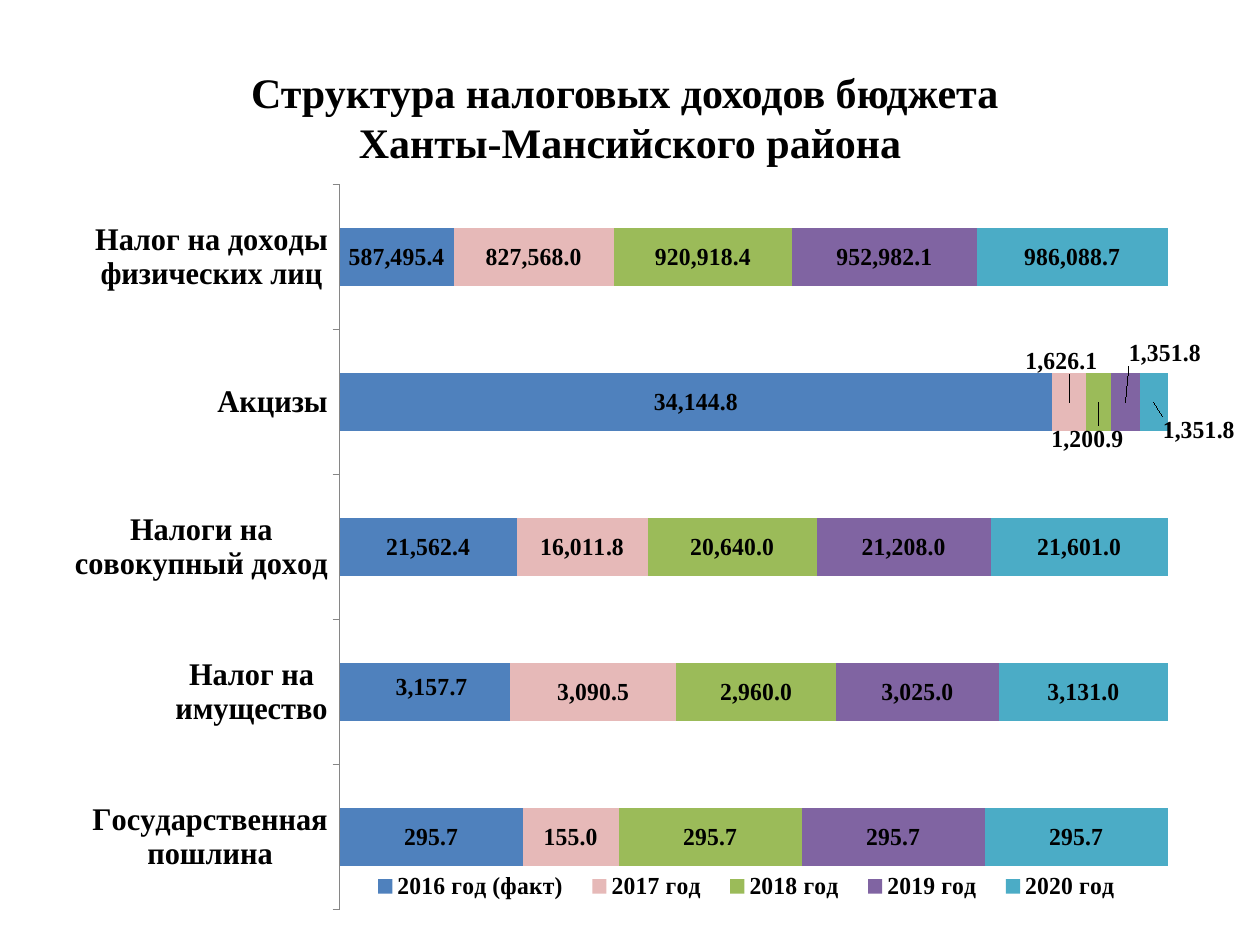
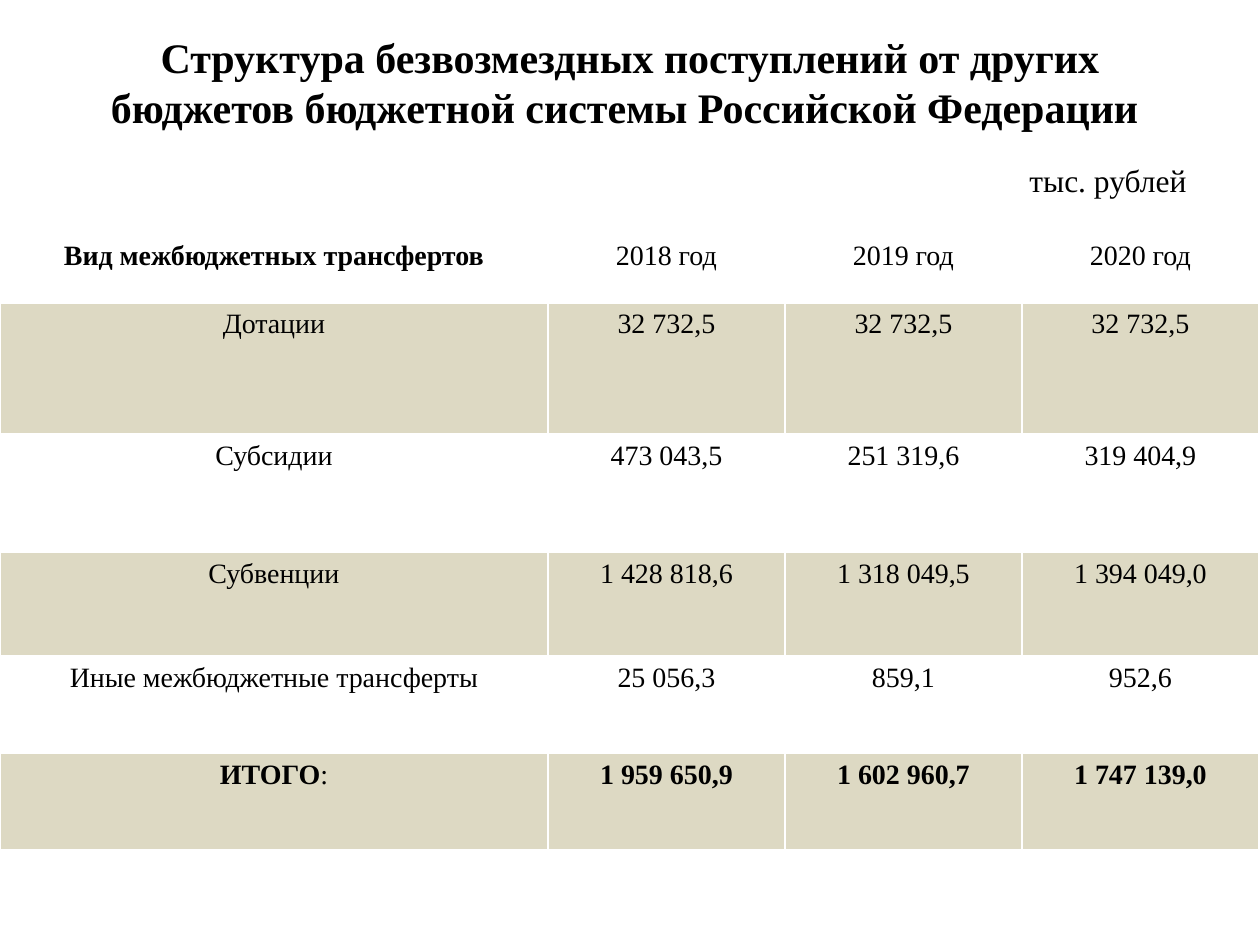
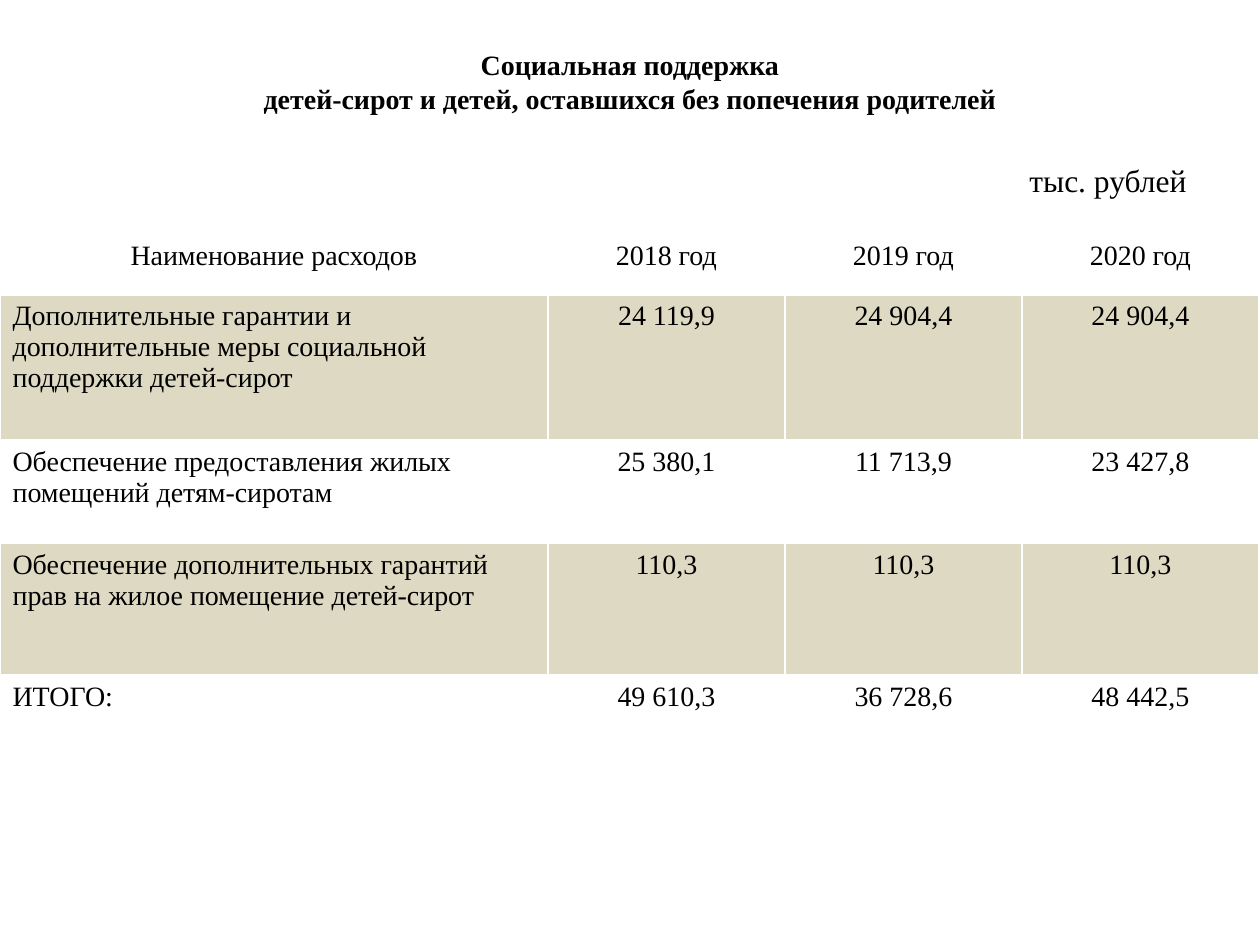
from pptx import Presentation
from pptx.chart.data import CategoryChartData
from pptx.dml.color import RGBColor
from pptx.enum.chart import XL_CHART_TYPE as ChartType, XL_LEGEND_POSITION as LegendPosition
from pptx.enum.chart import XL_TICK_LABEL_POSITION as TickLabels
from pptx.enum.text import MSO_ANCHOR as Anchor, PP_ALIGN as Align
from pptx.oxml.ns import qn
from pptx.oxml.xmlchemy import OxmlElement
from pptx.util import Emu, Pt

# Shared look
BLACK = RGBColor(0x00, 0x00, 0x00)
WHITE = RGBColor(0xFF, 0xFF, 0xFF)
BAND = RGBColor(0xDD, 0xD9, 0xC3)
AXIS_GRAY = RGBColor(0x86, 0x86, 0x86)
BLUE = RGBColor(0x4F, 0x81, 0xBD)
PINK = RGBColor(0xE6, 0xB9, 0xB8)
GREEN = RGBColor(0x9B, 0xBB, 0x59)
PURPLE = RGBColor(0x80, 0x64, 0xA2)
TEAL = RGBColor(0x4B, 0xAC, 0xC6)
FONT = "Times New Roman"
NUMBER_FORMAT = "#,##0.0"
PX_PER_INCH = 126
TITLE_BOX = (63, 38, 1134, 87)
UNIT_BOX = (1017, 155, 208, 50)
UNIT = "тыс. рублей"
COLUMN_WIDTHS = (548, 237, 237, 237)
TABLE_TOP = 234
YEARS = ("2018 год", "2019 год", "2020 год")

# Slide 1: tax revenue
TAX_TITLE = "Структура налоговых доходов бюджета \vХанты-Мансийского района"
TAX_TITLE_BOX = (63, 38, 1134, 157)
CHART_BOX = (63, 175, 1172, 745)
PLOT_AREA = (0.245, 0.013, 0.733, 0.973)
LEGEND_AREA = (0.26, 0.93, 0.69, 0.05)
TAXES = ("Государственная пошлина", "Налог на имущество", "Налоги на совокупный доход",
         "Акцизы", "Налог на доходы физических лиц")
# name, colour, values, (moved point, shift in px)
TAX_SERIES = (
    ("2016 год (факт)", BLUE, (295.7, 3157.7, 21562.4, 34144.8, 587495.4), (1, 7, -5)),
    ("2017 год", PINK, (155, 3090.5, 16011.8, 1626.1, 827568), (3, -8, -41)),
    ("2018 год", GREEN, (295.7, 2960, 20640, 1200.9, 920918.4), (3, -12, 37)),
    ("2019 год", PURPLE, (295.7, 3025, 21208, 1351.8, 952982.1), (3, 41, -49)),
    ("2020 год", TEAL, (295.7, 3131, 21601, 1351.8, 986088.7), (3, 47, 28)),
)

# Slides 2 and 3: tables
TABLE_SLIDES = (
    {
        "title": "Структура безвозмездных поступлений от других "
                 "бюджетов бюджетной системы Российской Федерации ",
        "title_size": 24,
        "name_align": Align.CENTER,
        "heights": (68, 132, 118, 104, 97, 97),
        "bold": {(0, 0), (5, 0), (5, 1), (5, 2), (5, 3)},
        "rows": (
            ("Вид межбюджетных трансфертов", *YEARS),
            ("Дотации", "32 732,5", "32 732,5", "32 732,5"),
            ("Субсидии", "473 043,5", "251 319,6", "319 404,9"),
            ("Субвенции", "1 428 818,6", "1 318 049,5", "1 394 049,0"),
            ("Иные межбюджетные трансферты", "25 056,3", "859,1", "952,6"),
            ("ИТОГО:", "1 959 650,9", "1 602 960,7", "1 747 139,0"),
        ),
    },
    {
        "title": "Социальная поддержка\vдетей-сирот и детей, оставшихся без попечения родителей",
        "title_size": 16,
        "name_align": Align.LEFT,
        "heights": (60, 146, 103, 132, 84),
        "bold": set(),
        "rows": (
            ("Наименование расходов", *YEARS),
            ("Дополнительные гарантии и дополнительные меры социальной поддержки детей-сирот",
             "24 119,9", "24 904,4", "24 904,4"),
            ("Обеспечение предоставления жилых помещений детям-сиротам",
             "25 380,1", "11 713,9", "23 427,8"),
            ("Обеспечение дополнительных гарантий прав на жилое помещение детей-сирот",
             "110,3", "110,3", "110,3"),
            ("ИТОГО:", "49 610,3", "36 728,6", "48 442,5"),
        ),
    },
)


def px(length):
    return Emu(round(length * 914400 / PX_PER_INCH))


def box(lengths):
    return [px(length) for length in lengths]


def set_font(font, size, bold=False):
    font.name, font.size, font.bold = FONT, Pt(size), bold
    font.color.rgb = BLACK


def add_text(slide, area, text, size, bold=False, align=Align.LEFT, anchor=Anchor.TOP):
    frame = slide.shapes.add_textbox(*box(area)).text_frame
    frame.word_wrap = True
    frame.vertical_anchor = anchor
    paragraph = frame.paragraphs[0]
    paragraph.text = text
    paragraph.alignment = align
    set_font(paragraph.font, size, bold)


def add_title(slide, text, size, area=TITLE_BOX):
    add_text(slide, area, text, size, True, Align.CENTER, Anchor.MIDDLE)


# Chart helpers
def add_value(parent, tag, **attributes):
    child = OxmlElement(tag)
    for name, value in attributes.items():
        child.set(name, str(value))
    parent.append(child)
    return child


def set_layout(parent, index, **settings):
    for old in parent.findall(qn("c:layout")):
        parent.remove(old)
    layout = OxmlElement("c:layout")
    manual = add_value(layout, "c:manualLayout")
    for name, value in settings.items():
        add_value(manual, f"c:{name}", val=value)
    parent.insert(index, layout)


def area_settings(area):
    return dict(xMode="edge", yMode="edge", **dict(zip("xywh", area)))


def label_series(series, moved):
    labels = series.data_labels
    labels.show_value = True
    labels.number_format = NUMBER_FORMAT
    labels.number_format_is_linked = False
    set_font(labels.font, 14, True)

    point, shift_x, shift_y = moved
    set_font(series.points[point].data_label.font, 14, True)
    label = labels._element.find(qn("c:dLbl"))
    set_layout(label, 1, x=round(shift_x / CHART_BOX[2], 3), y=round(shift_y / CHART_BOX[3], 3))
    number_format = add_value(label, "c:numFmt", formatCode=NUMBER_FORMAT, sourceLinked=0)
    label.insert(2, number_format)


def add_tax_chart(slide):
    data = CategoryChartData(number_format=NUMBER_FORMAT)
    data.categories = TAXES
    for name, _, values, _ in TAX_SERIES:
        data.add_series(name, values)
    chart = slide.shapes.add_chart(ChartType.BAR_STACKED_100, *box(CHART_BOX), data).chart
    chart.has_title = False
    set_font(chart.font, 18)

    plot = chart.plots[0]
    plot.gap_width, plot.overlap = 150, 100
    plot.vary_by_categories = False
    for series, (_, colour, _, moved) in zip(plot.series, TAX_SERIES):
        series.format.fill.solid()
        series.format.fill.fore_color.rgb = colour
        label_series(series, moved)

    axis = chart.category_axis
    axis.tick_label_position = TickLabels.LOW
    axis.format.line.color.rgb = AXIS_GRAY
    set_font(axis.tick_labels.font, 18, True)
    chart.value_axis.has_major_gridlines = False
    chart.value_axis.visible = False

    chart.has_legend = True
    legend = chart.legend
    legend.position = LegendPosition.BOTTOM
    legend.include_in_layout = False
    set_font(legend.font, 14, True)
    set_layout(legend._element, 1, **area_settings(LEGEND_AREA))
    plot_area = chart._chartSpace.chart.plotArea
    set_layout(plot_area, 0, layoutTarget="inner", **area_settings(PLOT_AREA))


# Table helpers
def set_borders(cell, bottom_width):
    properties = cell._tc.get_or_add_tcPr()
    widths = {"a:lnL": 1, "a:lnR": 1, "a:lnT": 1, "a:lnB": bottom_width}
    for index, (tag, width) in enumerate(widths.items()):
        line = add_value(properties, tag, w=Pt(width))
        add_value(add_value(line, "a:solidFill"), "a:srgbClr", val=WHITE)
        properties.insert(index, line)


def fill_cell(cell, text, bold, align, colour):
    cell.fill.solid()
    cell.fill.fore_color.rgb = colour
    paragraph = cell.text_frame.paragraphs[0]
    paragraph.alignment = align
    words, colon, _ = text.partition(":")
    for part, is_bold in ((words, bold), (colon, False)):
        if part:
            run = paragraph.add_run()
            run.text = part
            set_font(run.font, 16, is_bold)


def add_budget_table(slide, content):
    rows, heights = content["rows"], content["heights"]
    area = (0, TABLE_TOP, sum(COLUMN_WIDTHS), sum(heights))
    table = slide.shapes.add_table(len(rows), len(COLUMN_WIDTHS), *box(area)).table
    table.first_row = table.horz_banding = False
    for column, width in zip(table.columns, COLUMN_WIDTHS):
        column.width = px(width)
    for r, (texts, height) in enumerate(zip(rows, heights)):
        table.rows[r].height = px(height)
        for c, text in enumerate(texts):
            cell = table.cell(r, c)
            align = content["name_align"] if r and not c else Align.CENTER
            fill_cell(cell, text, (r, c) in content["bold"], align, BAND if r % 2 else WHITE)
            set_borders(cell, 1 if r else 3)


def main():
    presentation = Presentation()
    presentation.slide_width, presentation.slide_height = px(1260), px(945)
    blank = presentation.slide_layouts[6]

    slide = presentation.slides.add_slide(blank)
    add_title(slide, TAX_TITLE, 24, TAX_TITLE_BOX)
    add_tax_chart(slide)

    for content in TABLE_SLIDES:
        slide = presentation.slides.add_slide(blank)
        add_title(slide, content["title"], content["title_size"])
        add_budget_table(slide, content)
        add_text(slide, UNIT_BOX, UNIT, 18)

    presentation.save("out.pptx")


if __name__ == "__main__":
    main()
